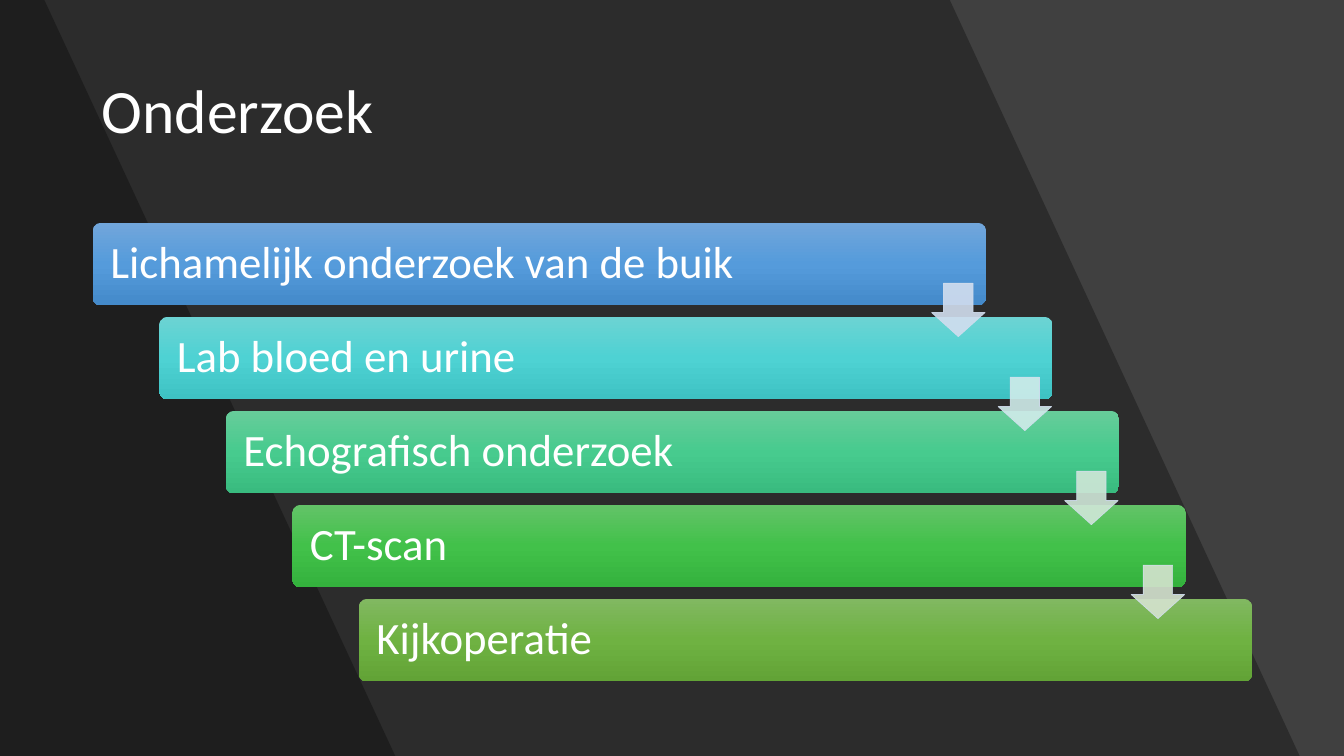
from lxml.etree import SubElement
from pptx import Presentation
from pptx.dml.color import RGBColor
from pptx.enum.shapes import MSO_SHAPE
from pptx.enum.text import MSO_ANCHOR, PP_ALIGN
from pptx.oxml.ns import qn
from pptx.util import Inches, Pt

WHITE = RGBColor(0xFF, 0xFF, 0xFF)
BLACK = RGBColor(0x00, 0x00, 0x00)
BACKDROP = RGBColor(0x40, 0x40, 0x40)
ARROW_EDGE = RGBColor(0xD2, 0xDE, 0xEF)
BLUES = RGBColor(0x71, 0xA6, 0xDB), RGBColor(0x55, 0x9B, 0xDB), RGBColor(0x44, 0x8A, 0xCA)
TEALS = RGBColor(0x6C, 0xD3, 0xD3), RGBColor(0x4E, 0xD2, 0xD3), RGBColor(0x3E, 0xC2, 0xC3)
MINTS = RGBColor(0x67, 0xCC, 0x9A), RGBColor(0x47, 0xCB, 0x8E), RGBColor(0x39, 0xBB, 0x7F)
GREENS = RGBColor(0x63, 0xC3, 0x68), RGBColor(0x42, 0xC1, 0x4A), RGBColor(0x34, 0xB2, 0x3D)
OLIVES = RGBColor(0x81, 0xB8, 0x61), RGBColor(0x6F, 0xB2, 0x42), RGBColor(0x62, 0xA3, 0x36)
ARROW_FILLS = (
    RGBColor(0xD2, 0xDE, 0xEF), RGBColor(0xD0, 0xEC, 0xEA),
    RGBColor(0xD0, 0xE7, 0xD8), RGBColor(0xD5, 0xE3, 0xCF),
)
EXAMINATIONS = (
    ("Lichamelijk onderzoek van de buik", BLUES),
    ("Lab bloed en urine", TEALS),
    ("Echografisch onderzoek", MINTS),
    ("CT-scan", GREENS),
    ("Kijkoperatie", OLIVES),
)
FONT = "Calibri"


def set_opacity(shape, percent):
    """Make every colour of the shape's fill and line partly transparent."""
    for colour in shape.element.spPr.iter(qn("a:srgbClr")):
        SubElement(colour, qn("a:alpha"), val=str(percent * 1000))


def set_gradient(shape, colours):
    """Fill the shape from top to bottom with evenly spaced colours."""
    shape.fill.gradient()
    gradient = shape.element.spPr.find(qn("a:gradFill"))
    for child in list(gradient):
        gradient.remove(child)
    stops = SubElement(gradient, qn("a:gsLst"))
    for index, colour in enumerate(colours):
        position = 100000 * index // (len(colours) - 1)
        stop = SubElement(stops, qn("a:gs"), pos=str(position))
        SubElement(stop, qn("a:srgbClr"), val=str(colour))
    SubElement(gradient, qn("a:lin"), ang="5400000", scaled="0")


def format_text(frame, text, size):
    """Write one left-aligned white line in the middle of the frame."""
    frame.text = text
    frame.word_wrap = True
    frame.vertical_anchor = MSO_ANCHOR.MIDDLE
    paragraph = frame.paragraphs[0]
    paragraph.alignment = PP_ALIGN.LEFT
    paragraph.line_spacing = 0.9
    font = paragraph.runs[0].font
    font.name, font.size, font.color.rgb = FONT, Pt(size), WHITE


def add_shade(slide, top_width, bottom_width, height):
    """Darken the left part of the slide up to a slanted edge."""
    builder = slide.shapes.build_freeform(0, 0, scale=1.0)
    builder.add_line_segments([(top_width, 0), (bottom_width, height), (0, height)])
    shade = builder.convert_to_shape()
    shade.shadow.inherit = False
    shade.fill.solid()
    shade.fill.fore_color.rgb = BLACK
    shade.line.fill.background()
    set_opacity(shade, 30)


def add_title(slide, left, top, width, height):
    """Place the slide title in the given box."""
    title = slide.shapes.title
    title.left, title.top, title.width, title.height = left, top, width, height
    format_text(title.text_frame, "Onderzoek", 44)


def add_bar(shapes, left, top, width, height, text, colours):
    """Add one examination bar with its label."""
    bar = shapes.add_shape(MSO_SHAPE.ROUNDED_RECTANGLE, left, top, width, height)
    bar.adjustments[0] = 0.1
    bar.shadow.inherit = False
    bar.line.fill.background()
    set_gradient(bar, colours)
    bar.text_frame.margin_left = bar.text_frame.margin_right = Inches(0.15)
    format_text(bar.text_frame, text, 32)


def add_arrow(shapes, left, top, size, colour):
    """Add a pale arrow that leads down to the next bar."""
    arrow = shapes.add_shape(MSO_SHAPE.DOWN_ARROW, left, top, size, size)
    arrow.adjustments[0], arrow.adjustments[1] = 0.55, 0.45
    arrow.shadow.inherit = False
    arrow.fill.solid()
    arrow.fill.fore_color.rgb = colour
    arrow.line.color.rgb = ARROW_EDGE
    arrow.line.width = Pt(0.5)
    set_opacity(arrow, 90)


def add_staircase(slide, left, top, width, height):
    """Step the examination bars down and right across the box."""
    shapes = slide.shapes.add_group_shape().shapes
    bar_width, bar_height, arrow_size = Inches(8.86), Inches(0.82), Inches(0.53)
    steps = len(EXAMINATIONS) - 1
    step_x = (width - bar_width) // steps
    step_y = (height - bar_height) // steps
    for index, (text, colours) in enumerate(EXAMINATIONS):
        add_bar(shapes, left + index * step_x, top + index * step_y,
                bar_width, bar_height, text, colours)
    for index, colour in enumerate(ARROW_FILLS):
        add_arrow(shapes, left + index * step_x + bar_width - arrow_size - Inches(0.01),
                  top + index * step_y + Inches(0.6), arrow_size, colour)


def main():
    """Build the slide and save it."""
    presentation = Presentation()
    presentation.slide_width, presentation.slide_height = Inches(13.33), Inches(7.5)
    slide = presentation.slides.add_slide(presentation.slide_layouts[5])
    slide.background.fill.solid()
    slide.background.fill.fore_color.rgb = BACKDROP
    add_shade(slide, Inches(9.42), Inches(12.89), presentation.slide_height)
    add_shade(slide, Inches(0.44), Inches(3.92), presentation.slide_height)
    title = slide.shapes.title.element
    title.getparent().append(title)
    add_title(slide, Inches(0.91), Inches(0.4), Inches(11.51), Inches(1.45))
    add_staircase(slide, Inches(0.92), Inches(2.21), Inches(11.5), Inches(4.55))
    presentation.save("out.pptx")


if __name__ == "__main__":
    main()
